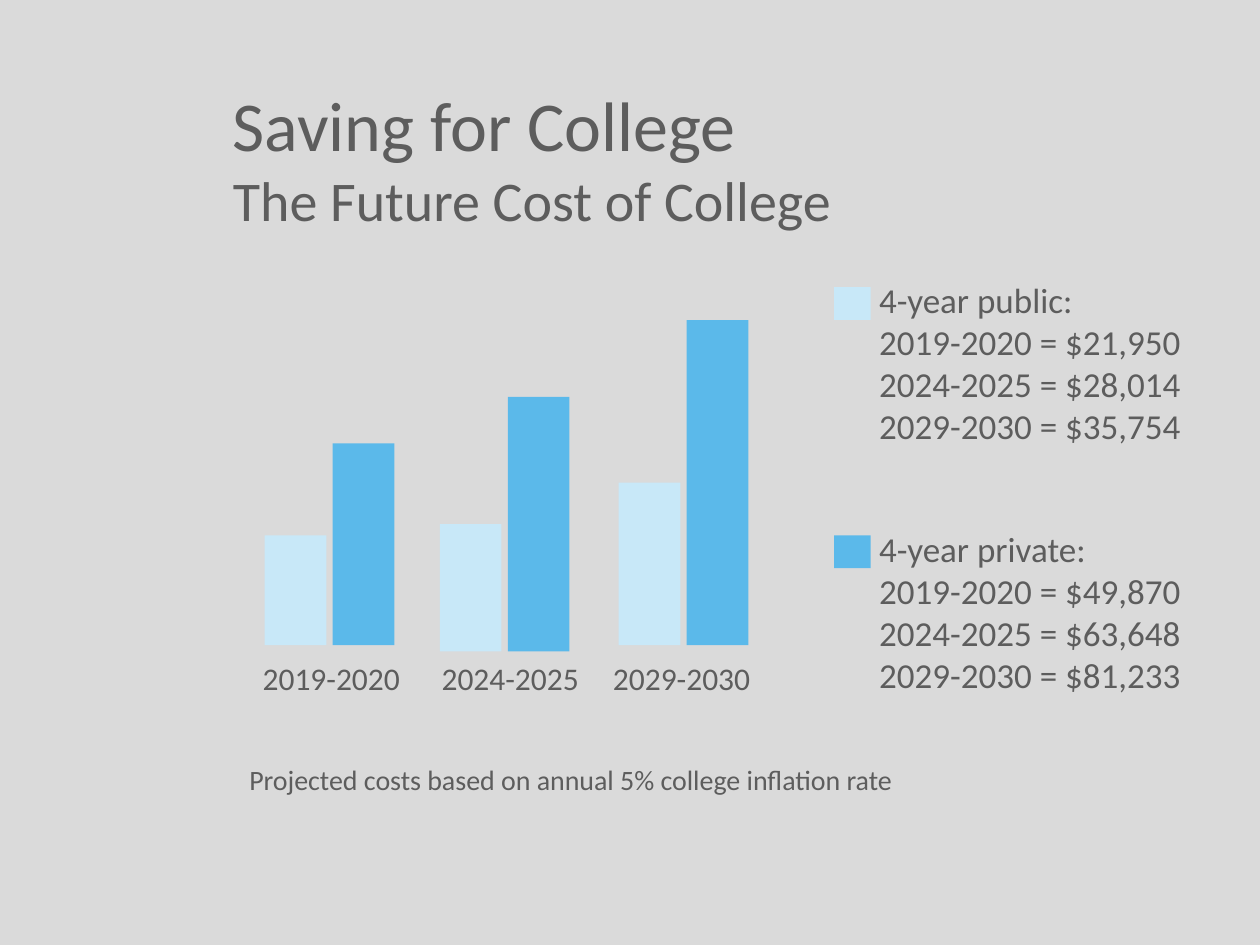
"""Build a slide on the future cost of college."""
from dataclasses import dataclass

from pptx import Presentation
from pptx.dml.color import RGBColor
from pptx.enum.shapes import MSO_SHAPE
from pptx.enum.text import MSO_ANCHOR, PP_ALIGN
from pptx.util import Inches, Pt


@dataclass(frozen=True)
class Theme:
    font: str = "Calibri"
    back: str = "DADADA"
    ink: str = "5D5D5D"
    public: str = "C8E8F8"
    private: str = "5BB9EA"
    title: int = 40
    second: int = 32
    legend: int = 20
    label: int = 18
    note: int = 16


THEME = Theme()
BAR_WIDTH = 0.49
BAR_STEP = 0.54
GROUPS = [
    ("2019-2020", 1.93, 2.1, 5.12, (0.87, 1.6)),
    ("2024-2025", 3.35, 3.49, 5.17, (1.01, 2.02)),
    ("2029-2030", 4.71, 4.91, 5.12, (1.29, 2.58)),
]
LEGENDS = [
    (THEME.public, 2.28, 2.16, 1.78, "4-year public:", ("$21,950", "$28,014", "$35,754")),
    (THEME.private, 4.25, 4.14, 1.45, "4-year private:", ("$49,870", "$63,648", "$81,233")),
]


def add_rect(slide, left, top, width, height, color):
    """Add a plain filled rectangle."""
    rect = slide.shapes.add_shape(
        MSO_SHAPE.RECTANGLE, Inches(left), Inches(top), Inches(width), Inches(height)
    )
    rect.shadow.inherit = False
    rect.fill.solid()
    rect.fill.fore_color.rgb = RGBColor.from_string(color)
    rect.line.fill.background()


def style_run(run, size):
    """Give a run the theme font, colour and a size."""
    run.font.name = THEME.font
    run.font.size = Pt(size)
    run.font.color.rgb = RGBColor.from_string(THEME.ink)


def add_text(slide, left, top, width, height, text, size, align=PP_ALIGN.LEFT):
    """Add a wrapped text box and return its frame."""
    box = slide.shapes.add_textbox(Inches(left), Inches(top), Inches(width), Inches(height))
    frame = box.text_frame
    frame.word_wrap = True
    frame.text = text
    for para in frame.paragraphs:
        para.alignment = align
        for run in para.runs:
            style_run(run, size)
    return frame


def add_title(slide):
    """Add the title with its smaller second line."""
    text = "Saving for College\vThe Future Cost of College"
    frame = add_text(slide, 1.75, 0.58, 6.2, 1.33, text, THEME.title)
    frame.vertical_anchor = MSO_ANCHOR.MIDDLE
    style_run(frame.paragraphs[0].runs[1], THEME.second)


def add_group(slide, years, label_left, left, base, heights):
    """Add one pair of bars with its label."""
    for index, (height, color) in enumerate(zip(heights, (THEME.public, THEME.private))):
        add_rect(slide, left + index * BAR_STEP, base - height, BAR_WIDTH, height, color)
    add_text(slide, label_left, 5.18, 1.4, 0.4, years, THEME.label, PP_ALIGN.CENTER)


def add_legend(slide, color, key_top, top, height, head, costs):
    """Add a colour key and its list of costs."""
    add_rect(slide, 6.62, key_top, 0.29, 0.26, color)
    lines = [f"{group[0]} = {cost}" for group, cost in zip(GROUPS, costs)]
    add_text(slide, 6.88, top, 2.8, height, "\n".join([head, *lines]), THEME.legend)


def main():
    """Build and save the slide."""
    deck = Presentation()
    deck.slide_width, deck.slide_height = Inches(10), Inches(7.5)
    slide = deck.slides.add_slide(deck.slide_layouts[6])
    slide.background.fill.solid()
    slide.background.fill.fore_color.rgb = RGBColor.from_string(THEME.back)
    add_title(slide)
    for group in GROUPS:
        add_group(slide, *group)
    for legend in LEGENDS:
        add_legend(slide, *legend)
    note = "Projected costs based on annual 5% college inflation rate"
    add_text(slide, 1.88, 6, 8.12, 0.37, note, THEME.note)
    deck.save("out.pptx")


if __name__ == "__main__":
    main()
